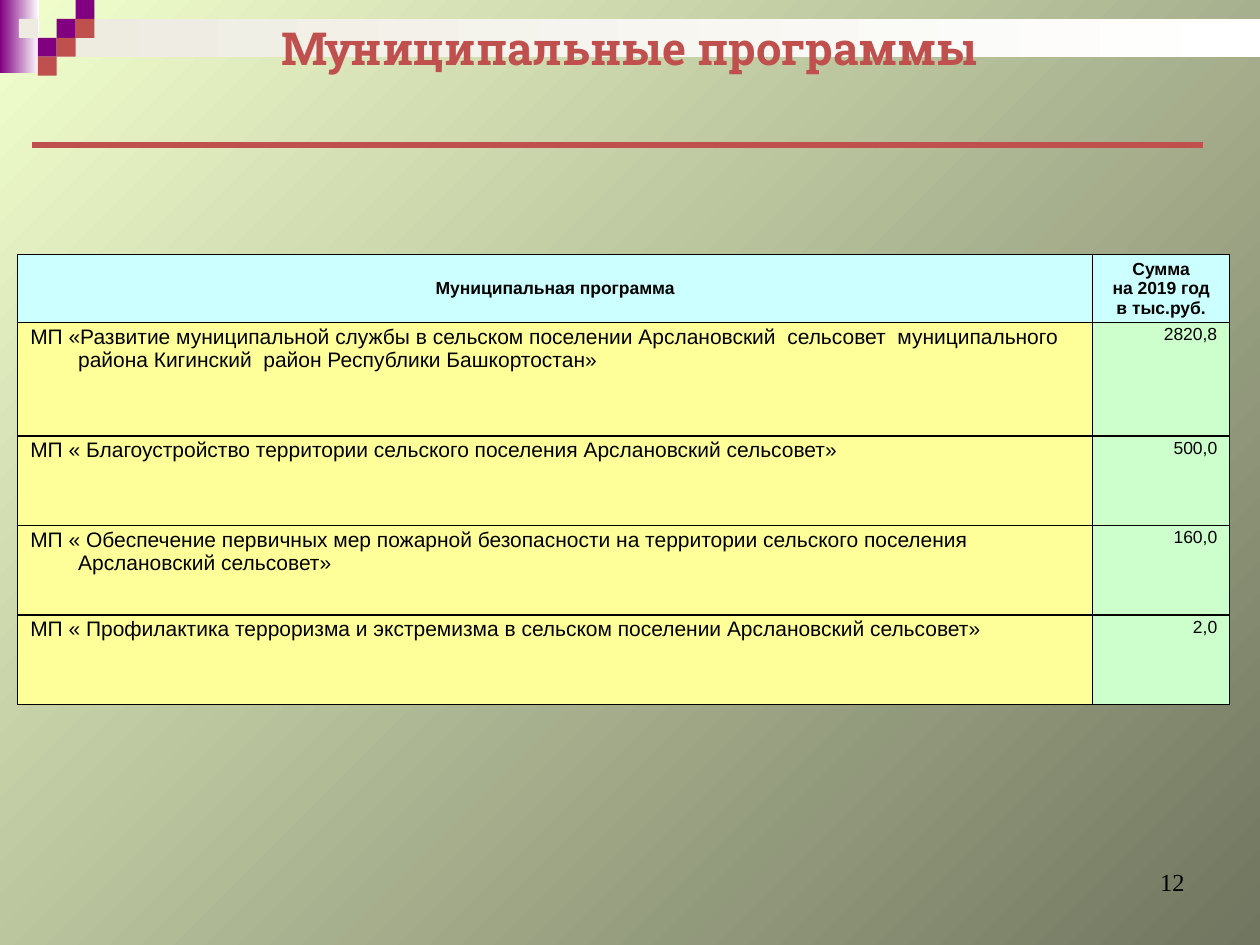
from dataclasses import dataclass

from lxml import etree
from pptx import Presentation
from pptx import util as u
from pptx.dml.color import RGBColor
from pptx.enum import shapes, text
from pptx.oxml.ns import qn

COLORS = {
    "purple": "800080", "red": "C0504D", "cream": "EEECE1", "white": "FFFFFF",
    "black": "000000", "light": "F2FFCD", "dark": "70765F",
    "header": "CCFFFF", "name": "FFFF99", "amount": "CCFFCC",
}
ALIGN = text.PP_ALIGN
ANCHOR = text.MSO_ANCHOR


@dataclass
class Block:
    left: float
    top: float
    width: float
    height: float
    color: str
    end_color: str = ""


@dataclass
class Program:
    name: str
    amount: str
    row_height: float


SIDE = 0.15
BLOCKS = [
    Block(0, 0, 0.31, 0.58, "purple", "white"),
    Block(0.45, 0.15, 9.55, 0.3, "cream", "white"),
] + [
    Block(column * SIDE, row * SIDE, SIDE, SIDE, color)
    for column, row, color in [
        (3, 1, "purple"), (4, 0, "purple"), (4, 1, "red"), (2, 2, "purple"),
        (1, 1, "cream"), (3, 2, "red"), (2, 3, "red"),
    ]
]
PROGRAMS = [
    Program("МП «Развитие муниципальной службы в сельском поселении Арслановский  сельсовет  "
            "муниципального района Кигинский  район Республики Башкортостан»", "2820,8", 0.9),
    Program("МП « Благоустройство территории сельского поселения Арслановский сельсовет»",
            "500,0", 0.71),
    Program("МП « Обеспечение первичных мер пожарной безопасности на территории сельского "
            "поселения Арслановский сельсовет»", "160,0", 0.71),
    Program("МП « Профилактика терроризма и экстремизма в сельском поселении "
            "Арслановский сельсовет»", "2,0", 0.71),
]


def rgb(name: str) -> RGBColor:
    """Return a named colour."""
    return RGBColor.from_string(COLORS[name])


def set_gradient(fill, start: str, end: str, angle: float) -> None:
    """Apply a linear gradient of two colours."""
    fill.gradient()
    fill.gradient_angle = angle
    for stop, color, position in zip(fill.gradient_stops, (start, end), (0, 1)):
        stop.color.rgb = rgb(color)
        stop.position = position


def set_text(frame, content: str, *, size: float, font: str = "Arial", color: str = "black",
             bold: bool = False, align=ALIGN.LEFT, hanging: float = 0) -> None:
    """Write one formatted paragraph for each line of the content."""
    frame.word_wrap = True
    for index, line in enumerate(content.split("\n")):
        paragraph = frame.add_paragraph() if index else frame.paragraphs[0]
        paragraph.alignment = align
        if hanging:
            properties = paragraph._p.get_or_add_pPr()
            properties.set("marL", str(u.Inches(hanging)))
            properties.set("indent", str(-u.Inches(hanging)))
        run = paragraph.add_run()
        run.text = line
        run.font.size = u.Pt(size)
        run.font.name = font
        run.font.bold = bold
        run.font.color.rgb = rgb(color)


def add_block(slide, block: Block) -> None:
    """Draw one decorative rectangle."""
    shape = slide.shapes.add_shape(
        shapes.MSO_SHAPE.RECTANGLE, u.Inches(block.left), u.Inches(block.top),
        u.Inches(block.width), u.Inches(block.height))
    shape.shadow.inherit = False
    shape.line.fill.background()
    if block.end_color:
        set_gradient(shape.fill, block.color, block.end_color, 0)
    else:
        shape.fill.solid()
        shape.fill.fore_color.rgb = rgb(block.color)


def add_label(slide, left: float, top: float, width: float, height: float,
              content: str, anchor=ANCHOR.TOP, **style) -> None:
    """Add a text box."""
    frame = slide.shapes.add_textbox(
        u.Inches(left), u.Inches(top), u.Inches(width), u.Inches(height)).text_frame
    frame.vertical_anchor = anchor
    set_text(frame, content, **style)


def add_rule(slide, left: float, right: float, top: float) -> None:
    """Draw the line under the title."""
    rule = slide.shapes.add_connector(
        shapes.MSO_CONNECTOR.STRAIGHT, u.Inches(left), u.Inches(top),
        u.Inches(right), u.Inches(top))
    rule.line.color.rgb = rgb("red")
    rule.line.width = u.Pt(3.75)
    etree.SubElement(rule._element.spPr, qn("a:effectLst"))


def fill_cell(cell, content: str, fill: str, anchor=ANCHOR.TOP, **style) -> None:
    """Set the text, fill and borders of a table cell."""
    cell.margin_left = cell.margin_right = u.Inches(0.1)
    cell.margin_top = cell.margin_bottom = u.Inches(0.02)
    cell.vertical_anchor = anchor
    set_text(cell.text_frame, content, **style)
    cell.fill.solid()
    cell.fill.fore_color.rgb = rgb(fill)
    properties = cell._tc.get_or_add_tcPr()
    for index, side in enumerate(("lnL", "lnR", "lnT", "lnB")):
        border = etree.Element(qn(f"a:{side}"), w=str(u.Pt(1)))
        solid = etree.SubElement(border, qn("a:solidFill"))
        etree.SubElement(solid, qn("a:srgbClr"), val=COLORS["black"])
        properties.insert(index, border)


def add_program_table(slide, programs: list[Program]) -> None:
    """Build the table of programs and amounts."""
    widths = (8.53, 1.09)
    heights = [0.54] + [program.row_height for program in programs]
    table = slide.shapes.add_table(
        len(heights), len(widths), u.Inches(0.14), u.Inches(2.02),
        u.Inches(sum(widths)), u.Inches(sum(heights))).table
    table.first_row = table.horz_banding = False
    for column, width in zip(table.columns, widths):
        column.width = u.Inches(width)
    for row, height in zip(table.rows, heights):
        row.height = u.Inches(height)
    for column, heading in enumerate(("Муниципальная программа", "Сумма\nна 2019 год\nв тыс.руб.")):
        fill_cell(table.cell(0, column), heading, "header", ANCHOR.MIDDLE,
                  size=10, bold=True, align=ALIGN.CENTER)
    for row, program in enumerate(programs, start=1):
        fill_cell(table.cell(row, 0), program.name, "name", size=12, hanging=0.38)
        fill_cell(table.cell(row, 1), program.amount, "amount", size=10,
                  align=ALIGN.RIGHT, hanging=0.38)


def main() -> None:
    """Build and save the presentation."""
    presentation = Presentation()
    presentation.slide_width = u.Inches(10)
    presentation.slide_height = u.Inches(7.5)
    slide = presentation.slides.add_slide(presentation.slide_layouts[6])
    set_gradient(slide.background.fill, "light", "dark", 315)
    for block in BLOCKS:
        add_block(slide, block)
    add_label(slide, 7.17, 6.83, 2.33, 0.52, "12", size=14,
              font="Times New Roman", align=ALIGN.RIGHT)
    add_label(slide, 0.5, 0.16, 9, 0.43, "Муниципальные программы", ANCHOR.MIDDLE,
              size=26, font="Roboto Slab", color="red", bold=True, align=ALIGN.CENTER)
    add_rule(slide, 0.25, 9.55, 1.15)
    add_program_table(slide, PROGRAMS)
    presentation.save("out.pptx")


if __name__ == "__main__":
    main()
